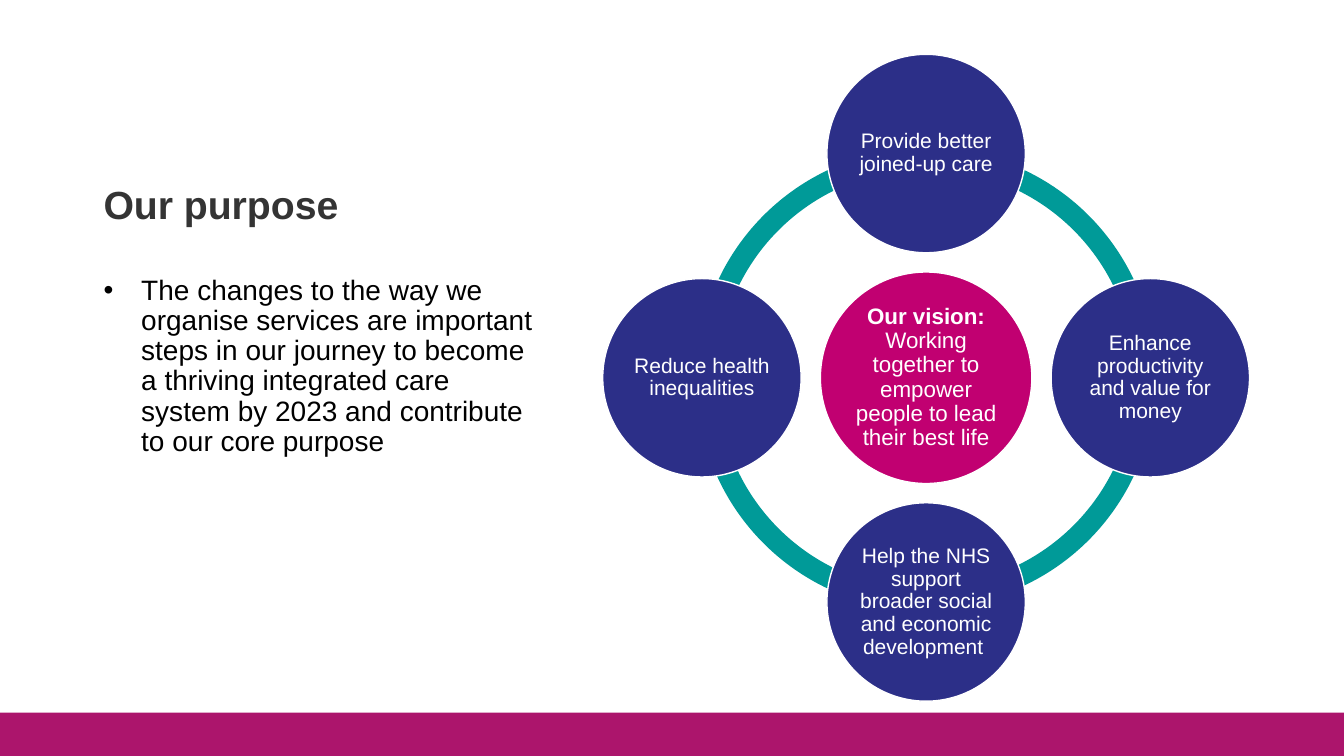
import math
from dataclasses import dataclass

from lxml import etree
from pptx import Presentation
from pptx import util as u
from pptx.dml.color import RGBColor
from pptx.enum import shapes, text
from pptx.oxml.ns import qn

WHITE = RGBColor(0xFF, 0xFF, 0xFF)
BLACK = RGBColor(0x00, 0x00, 0x00)
CHARCOAL = RGBColor(0x34, 0x34, 0x34)
NAVY = RGBColor(0x2C, 0x2F, 0x88)
MAGENTA = RGBColor(0xC1, 0x00, 0x71)
PLUM = RGBColor(0xAC, 0x15, 0x6C)
TEAL = RGBColor(0x00, 0x9A, 0x98)

# Lengths in centimetres
CENTRE_X, CENTRE_Y = 23.34, 9.52
RING_SIZE = 11.58
ORBIT_RADIUS = 5.65
GOAL_SIZE = 5.0
VISION_SIZE = 5.33
BULLET_INDENT = 0.95
QUARTER_TURN = 54  # 90 degrees in block arc adjustment units
FULL_TURN = 4 * QUARTER_TURN
BAND = 0.046


@dataclass(frozen=True)
class Goal:
    label: str
    angle: int  # clockwise degrees from the right


@dataclass(frozen=True)
class Arc:
    start: int  # quarter turns clockwise from the right
    drop: float = 0


GOALS = [
    Goal("Provide better joined-up care", 270),
    Goal("Enhance productivity and value for money", 0),
    Goal("Help the NHS support broader social and economic development ", 90),
    Goal("Reduce health inequalities", 180),
]
ARCS = [Arc(2), Arc(1, drop=0.08), Arc(0), Arc(3)]


def write(frame, content: str, *, size: float, color: RGBColor, lead: str = "",
          bold: bool = False, centred: bool = False, bullet: bool = False) -> None:
    """Fill a text frame with one paragraph, after an optional bold lead-in."""
    frame.word_wrap = True
    paragraph = frame.paragraphs[0]
    paragraph.line_spacing = 0.9
    paragraph.alignment = text.PP_ALIGN.CENTER if centred else text.PP_ALIGN.LEFT
    if bullet:
        properties = paragraph._p.get_or_add_pPr()
        properties.set("marL", str(u.Cm(BULLET_INDENT)))
        properties.set("indent", str(-u.Cm(BULLET_INDENT)))
        etree.SubElement(properties, qn("a:buFont"), typeface="Arial")
        etree.SubElement(properties, qn("a:buChar"), char="•")
    for words, is_bold in ((lead, True), (content, bold)):
        if words:
            run = paragraph.add_run()
            run.text = words
            run.font.name = "Arial"
            run.font.size = u.Pt(size)
            run.font.bold = is_bold
            run.font.color.rgb = color


def add_filled(slide, kind, left: float, top: float, width: float, height: float,
               color: RGBColor):
    shape = slide.shapes.add_shape(kind, u.Cm(left), u.Cm(top), u.Cm(width), u.Cm(height))
    shape.shadow.inherit = False
    shape.fill.solid()
    shape.fill.fore_color.rgb = color
    shape.line.fill.background()
    return shape


def add_arc(slide, arc: Arc) -> None:
    quarter = add_filled(slide, shapes.MSO_SHAPE.BLOCK_ARC, CENTRE_X - RING_SIZE / 2,
                         CENTRE_Y - RING_SIZE / 2 + arc.drop, RING_SIZE, RING_SIZE, TEAL)
    start = arc.start * QUARTER_TURN
    quarter.adjustments[0] = start
    quarter.adjustments[1] = (start + QUARTER_TURN) % FULL_TURN
    quarter.adjustments[2] = BAND


def add_circle(slide, x: float, y: float, diameter: float, color: RGBColor,
               label: str, *, size: float, lead: str = "") -> None:
    """Draw a labelled circle centred on x, y."""
    circle = add_filled(slide, shapes.MSO_SHAPE.OVAL, x - diameter / 2, y - diameter / 2,
                        diameter, diameter, color)
    circle.line.color.rgb = WHITE
    circle.line.width = u.Pt(1)
    frame = circle.text_frame
    frame.margin_left = frame.margin_right = u.Cm(0.05)
    frame.margin_top = frame.margin_bottom = u.Cm(0.05)
    frame.vertical_anchor = text.MSO_ANCHOR.MIDDLE
    write(frame, label, size=size, color=WHITE, lead=lead, centred=True)


def main() -> None:
    deck = Presentation()
    deck.slide_width, deck.slide_height = u.Cm(33.87), u.Cm(19.05)
    slide = deck.slides.add_slide(deck.slide_layouts[6])

    add_filled(slide, shapes.MSO_SHAPE.RECTANGLE, -0.28, 17.96, 34.42, 1.42, PLUM)

    heading = slide.shapes.add_textbox(u.Cm(2.36), u.Cm(4.55), u.Cm(20.73), u.Cm(1.4))
    write(heading.text_frame, "Our purpose", size=28, color=CHARCOAL, bold=True)

    purpose = slide.shapes.add_textbox(u.Cm(2.36), u.Cm(6.83), u.Cm(11.63), u.Cm(1.12))
    write(purpose.text_frame,
          "The changes to the way we organise services are important steps in our journey "
          "to become a thriving integrated care system by 2023 and contribute to our core "
          "purpose", size=20, color=BLACK, bullet=True)

    for arc in ARCS:
        add_arc(slide, arc)
    add_circle(slide, CENTRE_X, CENTRE_Y, VISION_SIZE, MAGENTA,
               "Working together to empower people to lead their best life",
               size=16, lead="Our vision: ")
    for goal in GOALS:
        angle = math.radians(goal.angle)
        add_circle(slide, CENTRE_X + ORBIT_RADIUS * math.cos(angle),
                   CENTRE_Y + ORBIT_RADIUS * math.sin(angle),
                   GOAL_SIZE, NAVY, goal.label, size=15)

    deck.save("out.pptx")


if __name__ == "__main__":
    main()
